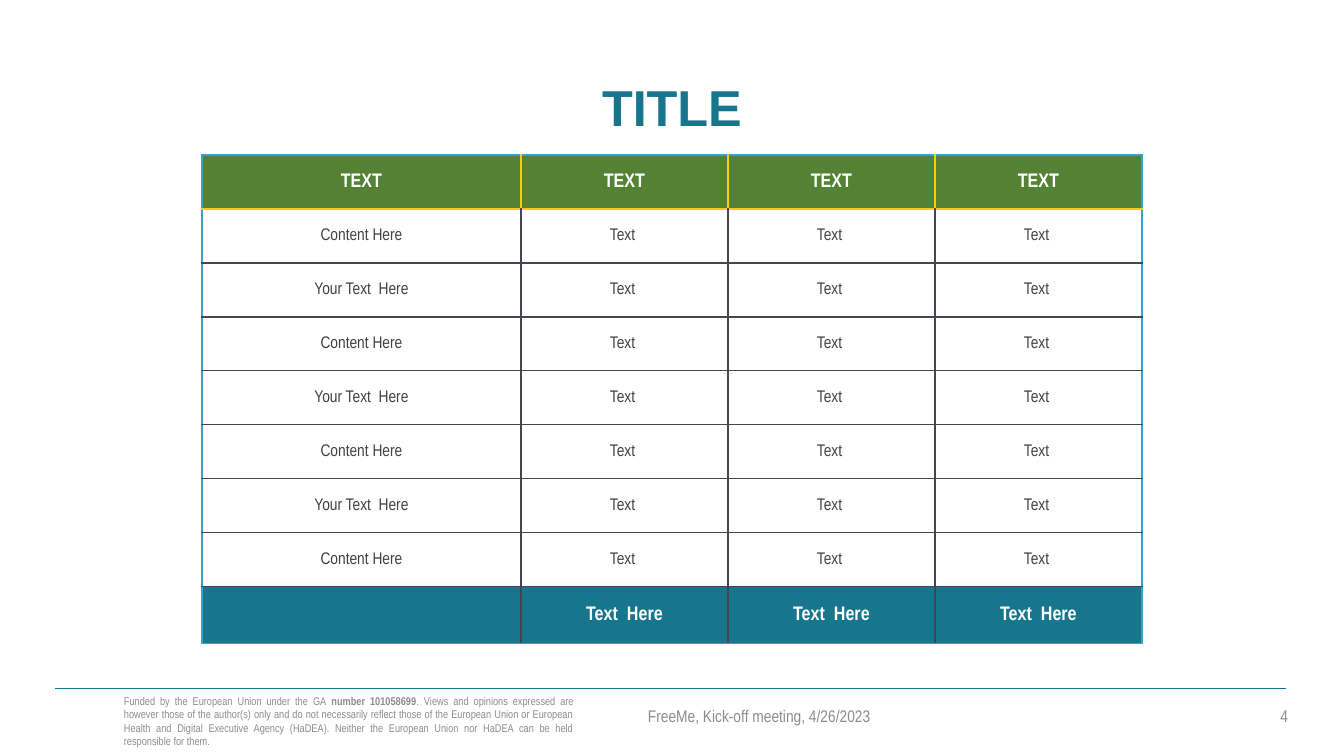
from dataclasses import dataclass

from lxml.etree import SubElement
from pptx import Presentation
from pptx.dml.color import RGBColor
from pptx.enum.shapes import MSO_CONNECTOR
from pptx.enum.text import MSO_ANCHOR, MSO_AUTO_SIZE, PP_ALIGN
from pptx.oxml import parse_xml
from pptx.oxml.ns import nsdecls, qn
from pptx.util import Pt


@dataclass(frozen=True)
class Theme:
    teal: str = "17758C"
    green: str = "548235"
    white: str = "FFFFFF"
    body: str = "404040"
    muted: str = "8C8C8C"
    grid: str = "45454D"
    frame: str = "37A1C9"
    accent: str = "F6CF08"
    heading_font: str = "Arial"
    text_font: str = "Arial Narrow"
    title_size: int = 36
    strong_size: int = 14
    body_size: int = 12
    notice_size: int = 8


def emu(px):
    return round(px * 914400 / 100.8)


class SlideBuilder:
    def __init__(self, slide, theme):
        self.slide = slide
        self.theme = theme

    def add_span(self, para, text, size, color, bold=False, font=None):
        span = para.add_run()
        span.text = text
        span.font.name = font or self.theme.text_font
        span.font.size = Pt(size)
        span.font.bold = bold
        span.font.color.rgb = RGBColor.from_string(color)

    def title(self, text, left, top, width, height):
        box = self.slide.shapes.title
        box.left, box.top, box.width, box.height = map(emu, (left, top, width, height))
        frame = box.text_frame
        frame.auto_size = MSO_AUTO_SIZE.NONE
        frame.vertical_anchor = MSO_ANCHOR.TOP
        para = frame.paragraphs[0]
        para.alignment = PP_ALIGN.CENTER
        self.add_span(para, text, self.theme.title_size, self.theme.teal, True, self.theme.heading_font)

    def text(self, spans, left, top, width, height, size, align=PP_ALIGN.LEFT):
        box = self.slide.shapes.add_textbox(*map(emu, (left, top, width, height)))
        frame = box.text_frame
        frame.word_wrap = True
        frame.vertical_anchor = MSO_ANCHOR.MIDDLE
        para = frame.paragraphs[0]
        para.alignment = align
        for text, bold in spans:
            self.add_span(para, text, size, self.theme.muted, bold)

    def rule(self, left, right, y):
        line = self.slide.shapes.add_connector(MSO_CONNECTOR.STRAIGHT, *map(emu, (left, y, right, y)))
        line.line.color.rgb = RGBColor.from_string(self.theme.teal)
        line.line.width = Pt(0.5)
        SubElement(line._element.spPr, qn("a:effectLst"))

    def borders(self, cell, colors):
        properties = cell._tc.get_or_add_tcPr()
        for index, (side, color) in enumerate(zip("LRTB", colors)):
            properties.insert(index, parse_xml(
                f'<a:ln{side} {nsdecls("a")} w="{Pt(1)}"><a:solidFill>'
                f'<a:srgbClr val="{color}"/></a:solidFill></a:ln{side}>'))

    def table(self, rows, left, top, column_widths, row_heights):
        theme = self.theme
        last_row, last_column = len(rows) - 1, len(column_widths) - 1
        bounds = map(emu, (left, top, sum(column_widths), sum(row_heights)))
        table = self.slide.shapes.add_table(len(rows), len(column_widths), *bounds).table
        table.first_row = table.horz_banding = False
        for column, width in zip(table.columns, column_widths):
            column.width = emu(width)
        for row, height in zip(table.rows, row_heights):
            row.height = emu(height)

        vertical_outer = (0, last_column + 1)
        horizontal = [theme.frame, theme.accent] + [theme.grid] * (last_row - 1) + [theme.frame]
        fills = {0: theme.green, last_row: theme.teal}
        for r, texts in enumerate(rows):
            inner = theme.accent if r == 0 else theme.grid
            strong = r in fills
            size = theme.strong_size if strong else theme.body_size
            color = theme.white if strong else theme.body
            for c, text in enumerate(texts):
                cell = table.cell(r, c)
                cell.vertical_anchor = MSO_ANCHOR.MIDDLE
                if strong:
                    cell.fill.solid()
                    cell.fill.fore_color.rgb = RGBColor.from_string(fills[r])
                else:
                    cell.fill.background()
                sides = [theme.frame if edge in vertical_outer else inner for edge in (c, c + 1)]
                self.borders(cell, sides + horizontal[r:r + 2])
                if text:
                    para = cell.text_frame.paragraphs[0]
                    para.alignment = PP_ALIGN.CENTER
                    self.add_span(para, text, size, color, strong)


def main():
    deck = Presentation()
    deck.slide_width, deck.slide_height = emu(1344), emu(756)
    theme = Theme()
    page = SlideBuilder(deck.slides.add_slide(deck.slide_layouts[5]), theme)

    page.title("TITLE", 285, 71, 774, 72)

    labels = ["Content Here", "Your Text  Here"]
    rows = [["TEXT"] * 4]
    rows += [[labels[i % 2]] + ["Text "] * 3 for i in range(7)]
    rows += [[""] + ["Text  Here"] * 3]
    page.table(rows, 202, 155, [319] + [207] * 3, [54] * 8 + [57])

    page.rule(55, 1286, 688)
    notice = [
        ("Funded by the European Union under the GA ", False),
        ("number 101058699", True),
        (". Views and opinions expressed are however those of the author(s) only and do not "
         "necessarily reflect those of the European Union or European Health and Digital "
         "Executive Agency (HaDEA). Neither the European Union nor HaDEA can be held "
         "responsible for them.", False),
    ]
    page.text(notice, 114, 692, 470, 58, theme.notice_size, PP_ALIGN.JUSTIFY)
    page.text([("FreeMe, Kick-off meeting, 4/26/2023", False)], 638, 696, 302, 40, theme.body_size)
    page.text([("4", False)], 996, 696, 302, 40, theme.body_size, PP_ALIGN.RIGHT)

    deck.save("out.pptx")


if __name__ == "__main__":
    main()
